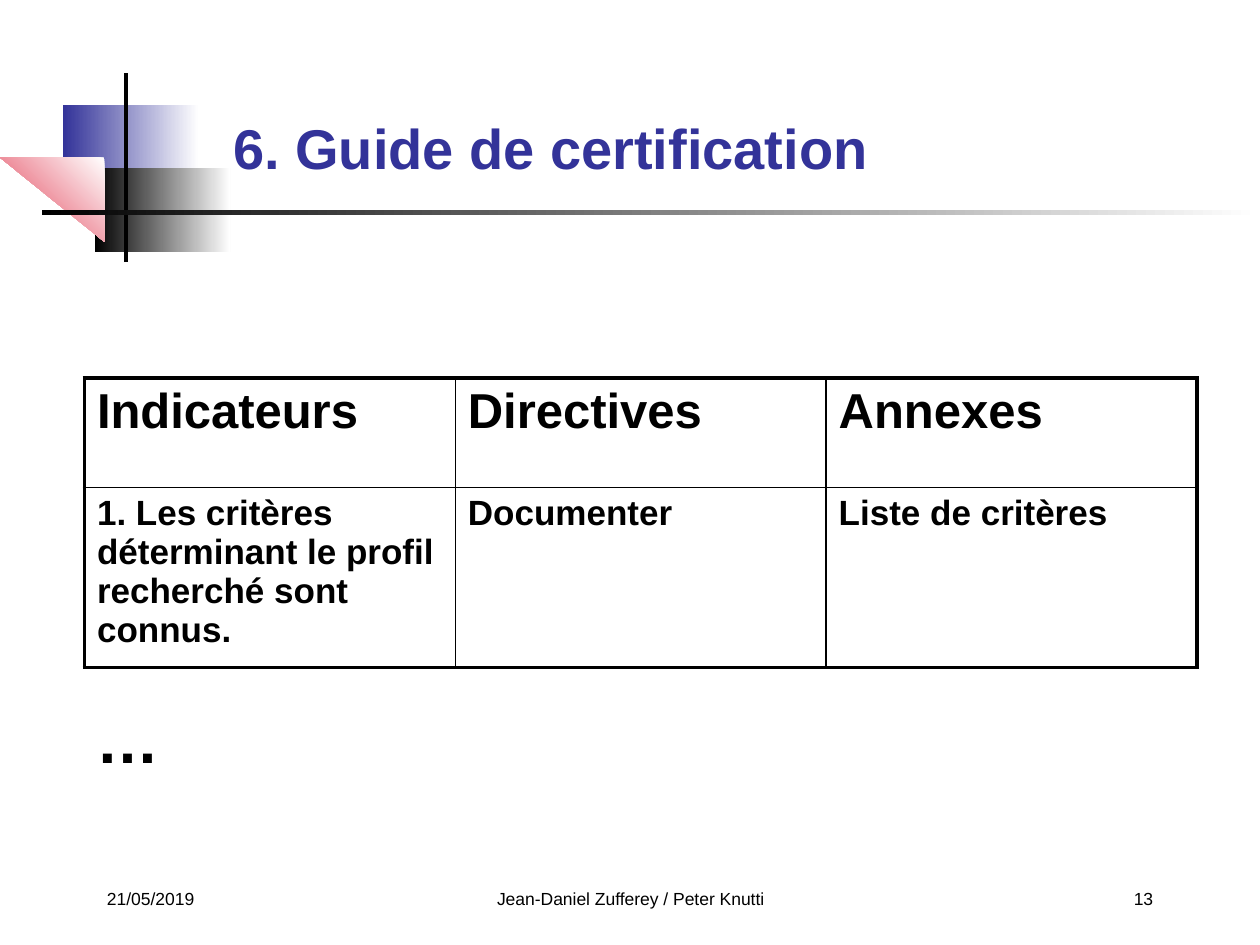
from typing import NamedTuple

from lxml import etree
from pptx import Presentation
from pptx.dml.color import RGBColor
from pptx.enum import shapes, text
from pptx.oxml import ns
from pptx.util import Inches, Pt

FONT = "Arial"
BLACK = RGBColor(0x00, 0x00, 0x00)
WHITE = RGBColor(0xFF, 0xFF, 0xFF)
BLUE = RGBColor(0x33, 0x33, 0x99)
RED = RGBColor(0xE0, 0x33, 0x4B)
RECTANGLE = shapes.MSO_SHAPE.RECTANGLE
TRIANGLE = shapes.MSO_SHAPE.RIGHT_TRIANGLE
LEFT, CENTER, RIGHT = text.PP_ALIGN.LEFT, text.PP_ALIGN.CENTER, text.PP_ALIGN.RIGHT
OUTER_WIDTH, INNER_WIDTH = 2.25, 1


class Box(NamedTuple):
    left: float
    top: float
    width: float
    height: float

    def lengths(self) -> list:
        return [Inches(value) for value in self]


class Ornament(NamedTuple):
    box: Box
    start: RGBColor
    end: RGBColor
    preset: shapes.MSO_SHAPE = RECTANGLE
    angle: float = 0
    flipped: bool = False


class Label(NamedTuple):
    box: Box
    wording: str
    align: text.PP_ALIGN = LEFT
    size: float = 10
    bold: bool = False
    wrap: bool = True


BACK_ORNAMENTS = [
    Ornament(Box(0.5, 0.83, 1.08, 0.75), BLUE, WHITE),
    Ornament(Box(0.75, 1.33, 1.08, 0.67), BLACK, WHITE),
    Ornament(Box(0, 1.25, 0.83, 0.67), WHITE, RED, TRIANGLE, 45, True),
]
TITLE_RULE = Ornament(Box(0.33, 1.67, 9.67, 0.04), BLACK, WHITE)
LABELS = [
    Label(Box(0.75, 7, 2.08, 0.33), "21/05/2019"),
    Label(Box(3.42, 7, 3.17, 0.33), "Jean-Daniel Zufferey / Peter Knutti", CENTER),
    Label(Box(7.17, 7, 2.08, 0.33), "13", RIGHT),
    Label(Box(0.67, 5.51, 0.7, 0.7), "…", size=36, bold=True, wrap=False),
]
TABLE_BOX = Box(0.67, 3, 8.83, 2.3)
ROW_HEIGHTS = [0.87, 1.43]
ROW_SIZES = [28, 20]
ROWS = [
    ["Indicateurs", "Directives", "Annexes"],
    ["1. Les critères déterminant le profil recherché sont connus.",
     "Documenter", "Liste de critères"],
]


def format_paragraph(paragraph, size: float, color: RGBColor = BLACK,
                     bold: bool = False, align: text.PP_ALIGN = LEFT) -> None:
    paragraph.alignment = align
    font = paragraph.font
    font.name, font.size, font.bold = FONT, Pt(size), bold
    font.color.rgb = color


def add_ornament(slide, ornament: Ornament) -> None:
    shape = slide.shapes.add_shape(ornament.preset, *ornament.box.lengths())
    shape.shadow.inherit = False
    shape.line.fill.background()
    shape.fill.gradient()
    shape.fill.gradient_angle = ornament.angle
    for stop, color, position in zip(
            shape.fill.gradient_stops, (ornament.start, ornament.end), (0, 1)):
        stop.color.rgb = color
        stop.position = position
    if ornament.flipped:
        transform = shape.element.spPr.find(ns.qn("a:xfrm"))
        transform.set("flipH", "1")
        transform.set("flipV", "1")


def add_vertical_line(slide) -> None:
    line = slide.shapes.add_connector(
        shapes.MSO_CONNECTOR.STRAIGHT,
        Inches(1), Inches(2.08), Inches(1), Inches(0.58))
    line.line.color.rgb = BLACK
    line.line.width = Pt(2.25)
    etree.SubElement(line.element.spPr, ns.qn("a:effectLst"))


def format_title(slide, wording: str) -> None:
    title = slide.shapes.title
    title.left, title.top, title.width, title.height = Box(1.75, 0.75, 6.58, 0.83).lengths()
    title.text_frame.text = wording
    title.text_frame.vertical_anchor = text.MSO_ANCHOR.MIDDLE
    format_paragraph(title.text_frame.paragraphs[0], 32, BLUE, True)


def add_label(slide, label: Label) -> None:
    frame = slide.shapes.add_textbox(*label.box.lengths()).text_frame
    frame.word_wrap = label.wrap
    if not label.wrap:
        frame.auto_size = text.MSO_AUTO_SIZE.SHAPE_TO_FIT_TEXT
    frame.text = label.wording
    format_paragraph(frame.paragraphs[0], label.size, bold=label.bold, align=label.align)


def set_borders(cell, outer_sides: dict[str, bool]) -> None:
    """Draw each side, thick where it lies on the table's edge."""
    properties = cell._tc.get_or_add_tcPr()
    for side, is_outer in outer_sides.items():
        width = Pt(OUTER_WIDTH if is_outer else INNER_WIDTH)
        border = etree.SubElement(properties, ns.qn(f"a:ln{side}"), w=str(width))
        fill = etree.SubElement(border, ns.qn("a:solidFill"))
        etree.SubElement(fill, ns.qn("a:srgbClr"), val=str(BLACK))


def add_indicator_table(slide) -> None:
    last_row, last_column = len(ROWS) - 1, len(ROWS[0]) - 1
    table = slide.shapes.add_table(
        len(ROWS), len(ROWS[0]), *TABLE_BOX.lengths()).table
    table.first_row = table.horz_banding = False
    for row, height in zip(table.rows, ROW_HEIGHTS):
        row.height = Inches(height)
    for r, wordings in enumerate(ROWS):
        for c, wording in enumerate(wordings):
            cell = table.cell(r, c)
            cell.text = wording
            format_paragraph(cell.text_frame.paragraphs[0], ROW_SIZES[r], bold=True)
            set_borders(cell, {"L": c == 0, "R": c == last_column,
                               "T": r == 0, "B": r == last_row})
            cell.fill.background()


def main() -> None:
    presentation = Presentation()
    presentation.slide_width, presentation.slide_height = Inches(10), Inches(7.5)
    slide = presentation.slides.add_slide(presentation.slide_layouts[5])
    for ornament in BACK_ORNAMENTS:
        add_ornament(slide, ornament)
    add_vertical_line(slide)
    add_ornament(slide, TITLE_RULE)
    format_title(slide, "6. Guide de certification")
    add_indicator_table(slide)
    for label in LABELS:
        add_label(slide, label)
    presentation.save("out.pptx")


if __name__ == "__main__":
    main()
